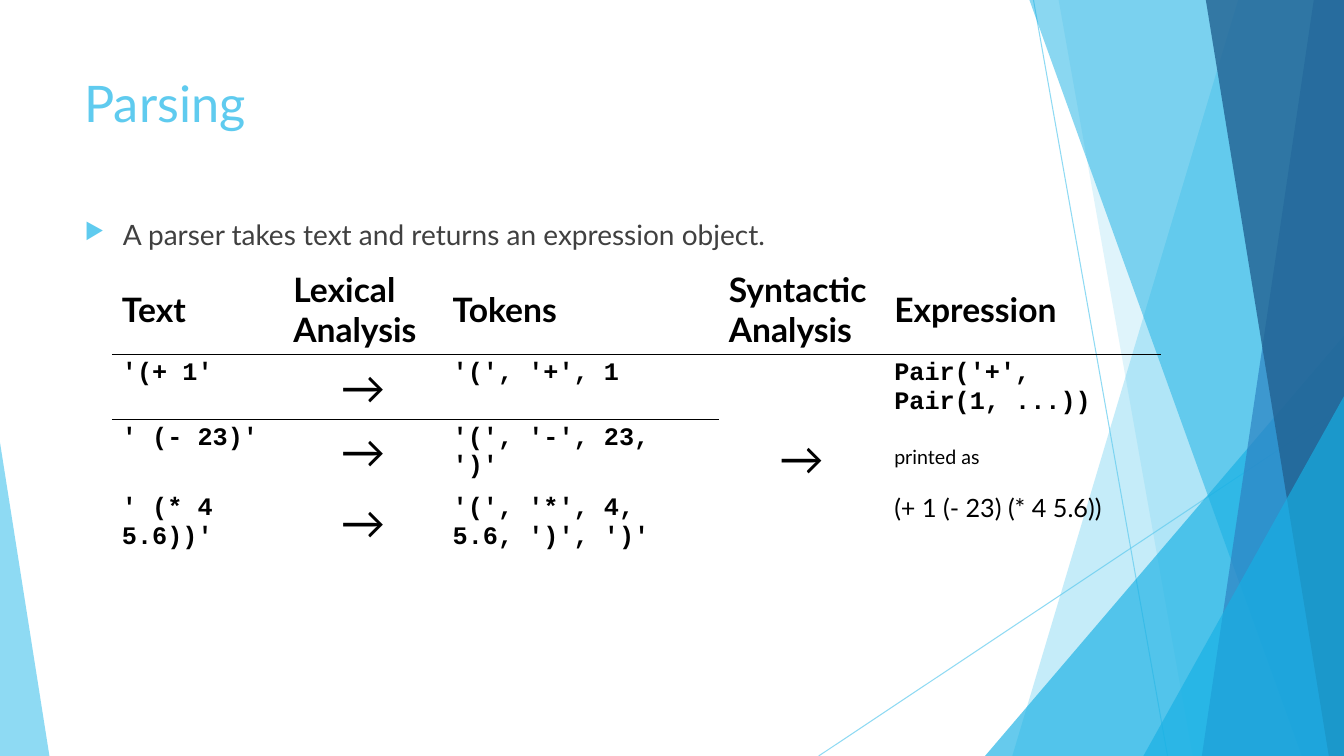
from lxml import etree
from pptx import Presentation
from pptx import util as u
from pptx.dml.color import RGBColor
from pptx.enum import shapes, text
from pptx.oxml import parse_xml
from pptx.oxml.ns import nsdecls, qn

# Content
COLOURS = {"sky": "5FCBEF", "cyan": "17B0E4", "blue": "2E83C3",
           "navy": "226292", "grey": "404040", "black": "000000"}
WIDTH, HEIGHT = 13.33, 7.5
TITLE = "Parsing"
STATEMENT = "A parser takes text and returns an expression object."
HEADINGS = ["Text", "Lexical Analysis", "Tokens", "Syntactic Analysis", "Expression"]
STEPS = [("'(+ 1'", "'(', '+', 1"),
         ("' (- 23)'", "'(', '-', 23, ')'"),
         ("' (* 4 5.6))'", "'(', '*', 4, 5.6, ')', ')'")]
ARROW = "→"

# Text formats
HEADING = {"size": u.Pt(24), "name": "Lato", "bold": True}
CODE = {"size": u.Pt(18), "name": "Courier New", "bold": True}
ARROW_FONT = {"size": u.Pt(32), "name": "Lato", "bold": False}
NOTE = {"size": u.Pt(14), "name": "Lato", "bold": False}
PLAIN = {"size": u.Pt(18), "name": "Lato", "bold": False}
EXPRESSION = [("Pair('+', Pair(1, ...))", CODE, 0),
              ("printed as", NOTE, 20),
              ("(+ 1 (- 23) (* 4 5.6))", PLAIN, 17)]

# Background: x of the ends of each line; bands run from top to bottom edge
LINES = [((10.25, 0), (11.58, HEIGHT)), ((WIDTH, 4.03), (8.12, HEIGHT))]
FACETS = [("band", 12.28, 10.04, "sky", 36),
          ("band", 10.5, 11.83, "sky", 20),
          ("triangle", (9.77, 3.33, 3.56), 1, "cyan", 66),
          ("band", 10.21, 12.91, "cyan", 50),
          ("band", 13.03, 11.92, "blue", 70),
          ("band", 11.96, 13.18, "navy", 80),
          ("triangle", (11.34, 3.93, 1.99), 1, "cyan", 66),
          ("triangle", (0, 4.39, 0.49), 0, "sky", 70)]

# Table layout
TABLE_LEFT, TABLE_TOP = 1.11, 2.62
COLUMNS = [1.7, 1.58, 2.74, 1.64, 2.75]
ROWS = [0.89, 0.64, 0.67, 0.67]
NO_GRID = "{2D5ABB26-0587-4C30-8999-92F81FD0307C}"

deck = Presentation()
deck.slide_width, deck.slide_height = u.Inches(WIDTH), u.Inches(HEIGHT)
page = deck.slides.add_slide(deck.slide_layouts[6])


def set_alpha(fill_parent, percent):
    colour = fill_parent.find(".//" + qn("a:srgbClr"))
    etree.SubElement(colour, qn("a:alpha")).set("val", str(percent * 1000))


def write(para, words, style, colour="black"):
    span = para.add_run()
    span.text = words
    for key, value in style.items():
        setattr(span.font, key, value)
    span.font.color.rgb = RGBColor.from_string(COLOURS[colour])


def add_text(left, top, width, height, words, style, colour):
    box = page.shapes.add_textbox(*map(u.Inches, (left, top, width, height)))
    box.text_frame.word_wrap = True
    para = box.text_frame.paragraphs[0]
    write(para, words, style, colour)
    return para


def fill_cell(cell, items, align=text.PP_ALIGN.LEFT, anchor=text.MSO_ANCHOR.TOP):
    cell.vertical_anchor = anchor
    frame = cell.text_frame
    for number, (words, style, gap) in enumerate(items):
        para = frame.add_paragraph() if number else frame.paragraphs[0]
        para.alignment, para.space_before = align, u.Pt(gap)
        write(para, words, style)


def rule_edge(cell, edge):
    cell._tc.get_or_add_tcPr().insert(0, parse_xml(
        f'<a:ln{edge} {nsdecls("a")} w="12700"><a:solidFill>'
        f'<a:srgbClr val="{COLOURS["black"]}"/></a:solidFill></a:ln{edge}>'))


# Thin background lines
for start, end in LINES:
    line = page.shapes.add_connector(shapes.MSO_CONNECTOR.STRAIGHT,
                                     *map(u.Inches, start + end))
    line.line.width = u.Pt(0.75)
    line.line.color.rgb = RGBColor.from_string(COLOURS["sky"])
    set_alpha(line.line._ln, 70)
    etree.SubElement(line._element.spPr, qn("a:effectLst"))

# Translucent facets
for kind, place, end, colour, alpha in FACETS:
    if kind == "band":
        builder = page.shapes.build_freeform(u.Inches(place), 0)
        corners = [(WIDTH, 0), (WIDTH, HEIGHT), (end, HEIGHT)]
        builder.add_line_segments([tuple(map(u.Inches, c)) for c in corners], close=True)
        facet = builder.convert_to_shape()
    else:
        left, top, width = place
        facet = page.shapes.add_shape(shapes.MSO_SHAPE.ISOSCELES_TRIANGLE,
                                      *map(u.Inches, (left, top, width, HEIGHT - top)))
        facet.adjustments[0] = end
    facet.shadow.inherit = False
    facet.line.fill.background()
    facet.fill.solid()
    facet.fill.fore_color.rgb = RGBColor.from_string(COLOURS[colour])
    set_alpha(facet._element.spPr, alpha)

# Title and bullet
add_text(0.74, 0.67, 9.4, 1.44, TITLE, {"size": u.Pt(36), "name": "Lato"}, "sky")
bullet = add_text(0.74, 2.11, 9.4, 0.51, STATEMENT,
                  {"size": u.Pt(20), "name": "Lato"}, "grey")
props = bullet._p.get_or_add_pPr()
props.set("marL", str(u.Inches(0.38)))
props.set("indent", str(-u.Inches(0.38)))
for mark in (f'<a:buClr {nsdecls("a")}><a:srgbClr val="{COLOURS["sky"]}"/></a:buClr>',
             f'<a:buSzPct {nsdecls("a")} val="80000"/>',
             f'<a:buChar {nsdecls("a")} char="▶"/>'):
    props.append(parse_xml(mark))

# Table frame
frame = page.shapes.add_table(len(ROWS), len(COLUMNS), *map(
    u.Inches, (TABLE_LEFT, TABLE_TOP, sum(COLUMNS), sum(ROWS))))
table = frame.table
table.first_row = table.horz_banding = False
table._tbl.tblPr.find(qn("a:tableStyleId")).text = NO_GRID
for column, width in zip(table.columns, COLUMNS):
    column.width = u.Inches(width)
for row, height in zip(table.rows, ROWS):
    row.height = u.Inches(height)
for cell in table.iter_cells():
    cell.fill.background()
for column in (3, 4):
    table.cell(1, column).merge(table.cell(3, column))

# Table text
MIDDLE, CENTRE = text.MSO_ANCHOR.MIDDLE, text.PP_ALIGN.CENTER
arrow = [(ARROW, ARROW_FONT, 0)]
for column, heading in enumerate(HEADINGS):
    fill_cell(table.cell(0, column), [(heading, HEADING, 0)], anchor=MIDDLE)
for row, (source, tokens) in enumerate(STEPS, 1):
    fill_cell(table.cell(row, 0), [(source, CODE, 0)])
    fill_cell(table.cell(row, 1), arrow, CENTRE)
    fill_cell(table.cell(row, 2), [(tokens, CODE, 0)])
fill_cell(table.cell(1, 3), arrow, CENTRE, MIDDLE)
fill_cell(table.cell(1, 4), EXPRESSION)

# Rules under the headings and under the first step
for column in range(len(COLUMNS)):
    rule_edge(table.cell(0, column), "B")
    if column < 3:
        rule_edge(table.cell(1, column), "B")
    rule_edge(table.cell(1, column), "T")

deck.save("out.pptx")
